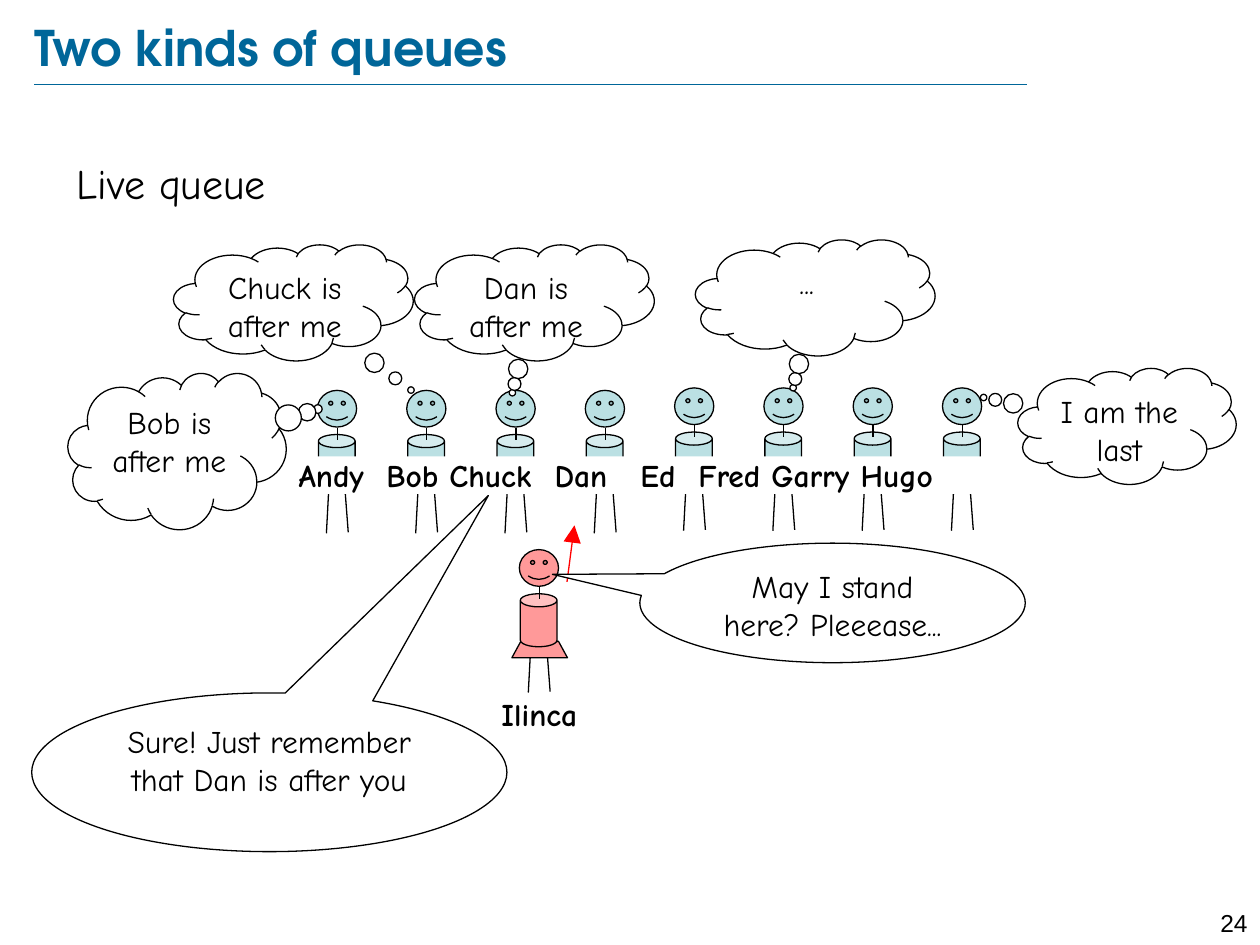
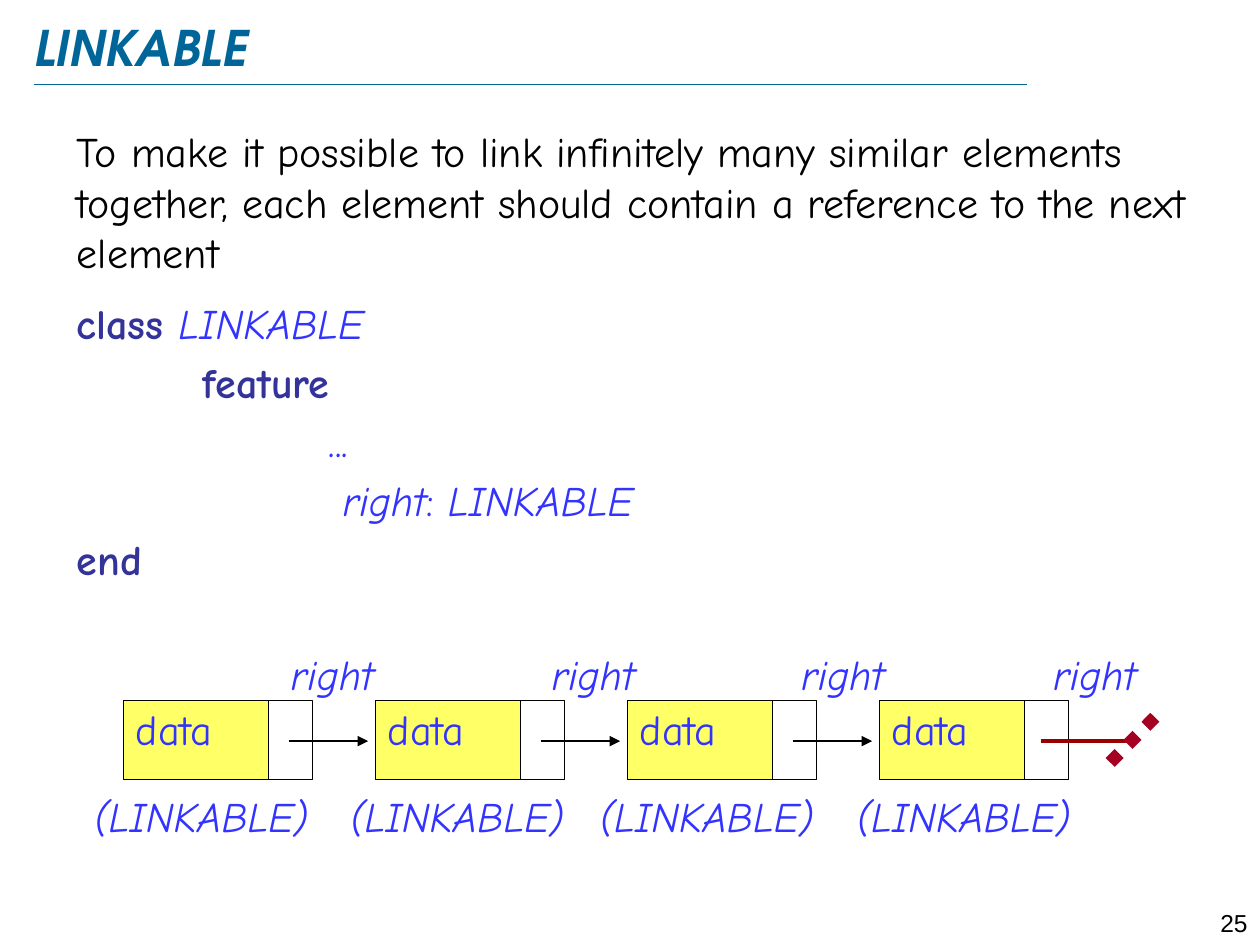
from dataclasses import dataclass

from pptx import Presentation
from pptx.dml.color import RGBColor
from pptx.enum.dml import MSO_LINE
from pptx.enum.shapes import MSO_CONNECTOR, MSO_SHAPE
from pptx.enum.text import MSO_ANCHOR, PP_ALIGN
from pptx.oxml.ns import qn
from pptx.util import Cm, Pt
from lxml import etree

LEFT, CENTER, RIGHT = PP_ALIGN.LEFT, PP_ALIGN.CENTER, PP_ALIGN.RIGHT
TOP, MIDDLE = MSO_ANCHOR.TOP, MSO_ANCHOR.MIDDLE
STRAIGHT, DOTS = MSO_CONNECTOR.STRAIGHT, MSO_LINE.ROUND_DOT
RECT, FACE, CAN = MSO_SHAPE.RECTANGLE, MSO_SHAPE.SMILEY_FACE, MSO_SHAPE.CAN
CLOUD, OVAL = MSO_SHAPE.CLOUD_CALLOUT, MSO_SHAPE.OVAL_CALLOUT
TITLE_ONLY = 5


@dataclass(frozen=True)
class Theme:
    """Hold the colours, fonts and type sizes."""
    ink: str = "000000"
    paper: str = "FFFFFF"
    title: str = "006699"
    code: str = "3333FF"
    key: str = "333399"
    crowd: str = "BBE0E3"
    guest: str = "FF9999"
    arrow: str = "FF0000"
    data: str = "FFFF66"
    wire: str = "990000"
    ground: str = "A50021"
    head_font: str = "TeX Gyre Adventor"
    body_font: str = "Comic Neue"
    page_font: str = "Arial"
    head_size: float = 28
    body_size: float = 24
    talk_size: float = 18
    page_size: float = 14
    line: float = 0.75


THEME = Theme()

CLOUDS = [
    ("Bob is after me", (1.37, 7.52, 4.4, 3.15), (0.645, -0.269)),
    ("I am the last", (20.52, 7.42, 4.4, 2.34), (-0.657, -0.246)),
    ("Chuck is after me", (3.5, 4.93, 4.83, 2.34), (0.491, 0.754)),
    ("Dan is after me", (8.36, 4.93, 4.83, 2.34), (-0.092, 0.777)),
    ("...", (14.02, 4.83, 4.83, 2.34), (-0.092, 0.777)),
]
OVALS = [
    ("Sure! Just remember that Dan is after you",
     (0.64, 13.97, 9.58, 3.2), (0.461, -1.744)),
    ("May I stand here? Pleeease...",
     (12.9, 10.95, 7.77, 2.41), (-0.727, -0.239)),
]
NAMES = ["Andy", "Bob", "Chuck", "Dan", "Ed", "Fred", "Garry", "Hugo"]
STOPS = [1.77, 3.04, 5.16, 6.89, 8.06, 9.53, 11.33]

INTRO = ("To make it possible to link infinitely many similar elements "
         "together, each element should contain a reference to the next element")
CODE = [
    (12, 0, [("class ", "key"), ("LINKABLE", "name")]),
    (4.8, 2.54, [("feature", "key")]),
    (4.8, 5.08, [("...", "mark")]),
    (4.8, 5.36, [("right", "name"), (": ", "mark"), ("LINKABLE", "name")]),
    (4.8, 0, [("end", "key")]),
]
LINKS = [5.61, 10.87, 15.9, 20.98]
TYPES = [1.65, 6.81, 11.84, 17.02]


def rgb(color):
    """Turn a hex string into a colour."""
    return RGBColor.from_string(color)


def style(para, size, color=THEME.ink, font=THEME.body_font, bold=False,
          slant=False, align=LEFT):
    """Format a whole paragraph."""
    para.alignment = align
    para.font.name, para.font.size = font, Pt(size)
    para.font.bold, para.font.italic = bold, slant
    para.font.color.rgb = rgb(color)


def setup(frame, anchor=TOP, pads=None):
    """Set wrapping, anchor and optional side and end margins of a frame."""
    frame.word_wrap = True
    frame.vertical_anchor = anchor
    if pads:
        side, end = pads
        frame.margin_left = frame.margin_right = Cm(side)
        frame.margin_top = frame.margin_bottom = Cm(end)


def write(slide, text, box, size=THEME.body_size, **look):
    """Add a text box with one paragraph and return its frame."""
    frame = slide.shapes.add_textbox(*map(Cm, box)).text_frame
    setup(frame)
    frame.text = text
    style(frame.paragraphs[0], size, **look)
    return frame


def paint(shape, fill, line=THEME.ink):
    """Give a shape its fill and outline."""
    shape.shadow.inherit = False
    if fill:
        shape.fill.solid()
        shape.fill.fore_color.rgb = rgb(fill)
    else:
        shape.fill.background()
    if line:
        shape.line.color.rgb = rgb(line)
        shape.line.width = Pt(THEME.line)
    else:
        shape.line.fill.background()


def block(slide, kind, box, fill, line=THEME.ink, adjust=()):
    """Add a preset shape."""
    shape = slide.shapes.add_shape(kind, *map(Cm, box))
    for spot, value in enumerate(adjust):
        shape.adjustments[spot] = value
    paint(shape, fill, line)
    return shape


def stroke(slide, ends, color=THEME.ink, width=THEME.line, tip=None, dash=None):
    """Add a straight line, with an arrow tip of the given size if any."""
    line = slide.shapes.add_connector(STRAIGHT, *map(Cm, ends))
    line.line.color.rgb = rgb(color)
    line.line.width = Pt(width)
    if dash:
        line.line.dash_style = dash
    props = line._element.spPr
    if tip:
        etree.SubElement(props.find(qn("a:ln")), qn("a:tailEnd"),
                         type="triangle", w=tip, len=tip)
    etree.SubElement(props, qn("a:effectLst"))


def callout(slide, kind, text, box, point):
    """Add a speech or thought bubble."""
    frame = block(slide, kind, box, THEME.paper, adjust=point).text_frame
    setup(frame)
    frame.text = text
    style(frame.paragraphs[0], THEME.talk_size, align=CENTER)


def label(slide, text, box, stops=()):
    """Add a bold name plate, with tab stops where needed."""
    frame = block(slide, RECT, box, THEME.paper, line=None).text_frame
    setup(frame, pads=(0.25, 0))
    para = frame.paragraphs[0]
    para.text = text
    if stops:
        tabs = etree.SubElement(para._p.get_or_add_pPr(), qn("a:tabLst"))
        for stop in stops:
            etree.SubElement(tabs, qn("a:tab"), pos=str(Cm(stop)), algn="l")
    style(para, THEME.talk_size, bold=True)


def skirt(slide, x, y, fill):
    """Draw the flared skirt of a figure."""
    points = [(-0.15, 2.18), (0.03, 1.85), (0.79, 1.85), (0.97, 2.18)]
    first, *rest = [(Cm(x + dx), Cm(y + dy)) for dx, dy in points]
    outline = slide.shapes.build_freeform(*first)
    outline.add_line_segments(rest, close=True)
    paint(outline.convert_to_shape(), fill)


def person(slide, x, y, fill, dressed=False):
    """Draw a figure whose head starts at x, y."""
    for x1, y1, x2, y2 in [(0.23, 1.94, 0.18, 2.88), (0.55, 1.94, 0.62, 2.86)]:
        stroke(slide, (x + x1, y + y1, x + x2, y + y2))
    if dressed:
        skirt(slide, x, y, fill)
    block(slide, CAN, (x + 0.02, y + 0.89, 0.74, 1.07), fill, adjust=[0.357])
    block(slide, FACE, (x, y, 0.79, 0.74), fill)
    stroke(slide, (x + 0.4, y + 0.75, x + 0.4, y + 0.99))


def node(slide, x):
    """Draw a list cell with its data and link parts."""
    block(slide, RECT, (x, 14.12, 2.92, 1.6), THEME.data)
    frame = write(slide, "data", (x, 14.33, 3.12, 1.02), color=THEME.code)
    frame.paragraphs[0].line_spacing = 0.7
    block(slide, RECT, (x + 2.92, 14.12, 0.89, 1.6), None)


def code(frame):
    """Append the class text below the opening paragraph."""
    looks = {"key": (THEME.key, True, False), "name": (THEME.code, False, True),
             "mark": (THEME.code, False, False)}
    for space, indent, parts in CODE:
        para = frame.add_paragraph()
        para._p.get_or_add_pPr().set("marL", str(Cm(indent)))
        para.space_before = Pt(space)
        style(para, THEME.body_size)
        for text, look in parts:
            run = para.add_run()
            run.text = text
            color, run.font.bold, run.font.italic = looks[look]
            run.font.color.rgb = rgb(color)


def begin(deck, title, page, slant=False):
    """Add a slide with its title, rule and page number."""
    slide = deck.slides.add_slide(deck.slide_layouts[TITLE_ONLY])
    stroke(slide, (0.69, 1.7, 20.7, 1.7), THEME.title, 0.25)
    write(slide, str(page), (24, 18.19, 1.4, 0.61), THEME.page_size,
          font=THEME.page_font, align=RIGHT)
    head = slide.shapes.title
    head.left, head.top, head.width, head.height = map(
        Cm, (0.69, 0.33, 22.07, 1.22))
    setup(head.text_frame, MIDDLE, (0, 0))
    head.text_frame.text = title
    style(head.text_frame.paragraphs[0], THEME.head_size, THEME.title,
          THEME.head_font, bold=True, slant=slant)
    return slide


def queue(deck):
    """Build the slide with the people in line."""
    slide = begin(deck, "Two kinds of queues", 24)
    write(slide, "Live queue", (1.3, 3.05, 23.39, 1.35))
    for place in range(len(NAMES)):
        person(slide, 6.4 + 1.8 * place, 7.87 if place < 4 else 7.82, THEME.crowd)
    label(slide, "\t".join(NAMES), (5.77, 9.2, 15.27, 0.76), STOPS)
    stroke(slide, (11.43, 11.73, 11.58, 10.59), THEME.arrow, tip="lg")
    person(slide, 10.47, 11.08, THEME.guest, dressed=True)
    for bubble in CLOUDS:
        callout(slide, CLOUD, *bubble)
    label(slide, "Ilinca", (9.86, 14.02, 2.39, 0.79))
    for bubble in OVALS:
        callout(slide, OVAL, *bubble)


def chain(deck):
    """Build the slide with the class text and the linked cells."""
    slide = begin(deck, "LINKABLE", 25, slant=True)
    code(write(slide, INTRO, (1.3, 2.41, 23.39, 14.83)))
    for place, (link, kind) in enumerate(zip(LINKS, TYPES)):
        x = 2.49 + 5.08 * place
        node(slide, x)
        if place < len(LINKS) - 1:
            stroke(slide, (x + 3.33, 14.94, x + 4.93, 14.94), tip="med")
        write(slide, "right", (link, 12.95, 2.62, 1.27),
              color=THEME.code, slant=True)
        write(slide, "(LINKABLE)", (kind, 15.82, 5.51, 1.27),
              color=THEME.code, slant=True)
    stroke(slide, (20.98, 14.94, 22.73, 14.94), THEME.wire, 2)
    stroke(slide, (22.38, 15.37, 23.29, 14.45), THEME.ground, 7.25, dash=DOTS)


def main():
    """Build and save the deck."""
    deck = Presentation()
    deck.slide_width, deck.slide_height = Cm(25.4), Cm(19.05)
    queue(deck)
    chain(deck)
    deck.save("out.pptx")


if __name__ == "__main__":
    main()
